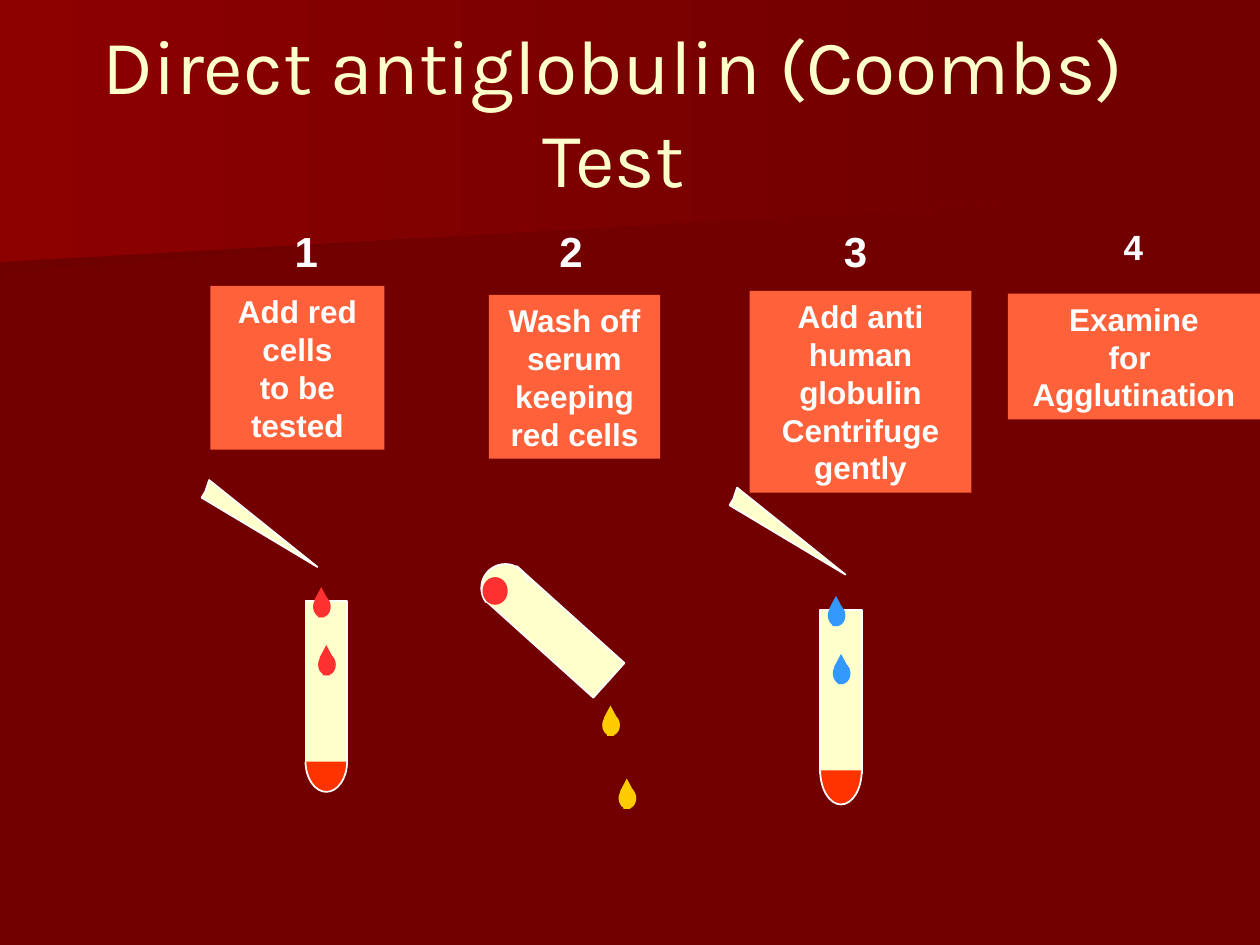
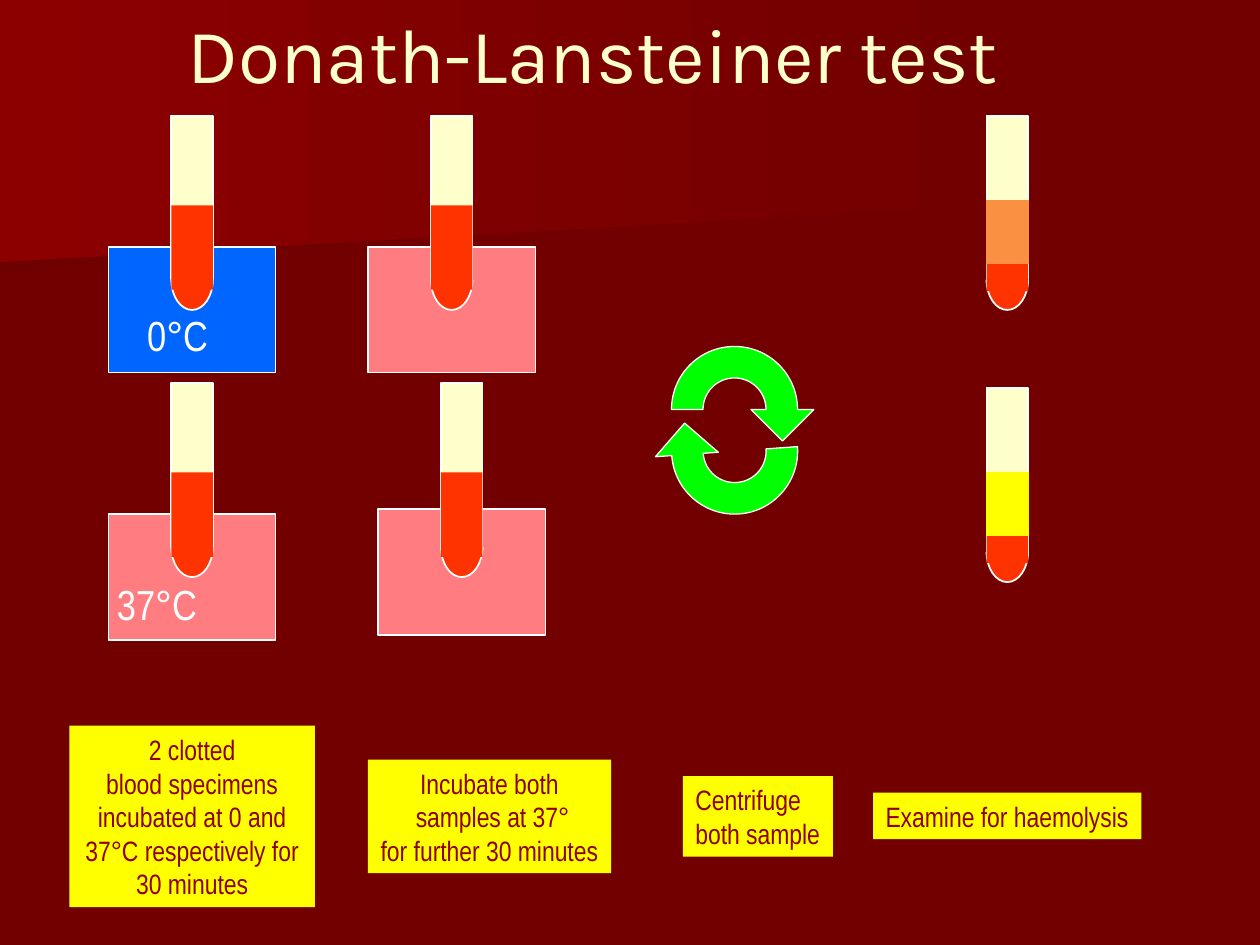
from math import ceil, cos, radians, sin, tan

from lxml import etree
from pptx import Presentation
from pptx.dml.color import RGBColor
from pptx.enum.shapes import MSO_SHAPE
from pptx.enum.text import MSO_ANCHOR, PP_ALIGN
from pptx.oxml.ns import qn
from pptx.util import Inches, Pt

RECTANGLE, OVAL, UP_ARROW = MSO_SHAPE.RECTANGLE, MSO_SHAPE.OVAL, MSO_SHAPE.UP_ARROW
LEFT, CENTER, MIDDLE = PP_ALIGN.LEFT, PP_ALIGN.CENTER, MSO_ANCHOR.MIDDLE

WIDTH, HEIGHT = 10, 7.5
COLORS = {
    "background": "720000", "band_shadow": "6F0000", "band": "8C0000",
    "cream": "FFFFCC", "white": "FFFFFF", "label": "FF623A", "cells": "FF3030",
    "blood": "FF3300", "serum": "FFCC00", "reagent": "3399FF", "cold": "0066FF",
    "warm": "FF7C80", "note": "FFFF00", "note_text": "8C0000",
    "haemolysed": "FA9142", "arrow": "00FF00",
}
BANDS = [
    ("band_shadow", [(7.78, 1.53), (0, 2.17), (0, 1.01), (7.79, 1.01), (7.78, 1.28)]),
    ("band", [(7.92, 1.62), (0, 2.08), (0, 0), (7.92, 0)]),
]

# Boxes are left, top, width, height in inches
COOMBS_TITLE = ("Direct antiglobulin (Coombs) Test", (0.58, 0.25, 8.58, 1.25))
COOMBS_STEPS = [
    # number, number box, number size, label lines, label box
    ("2", (4.34, 1.74, 0.39, 0.5), 24, ["Wash off", "serum", "keeping red cells"],
     (3.88, 2.34, 1.36, 1.3)),
    ("4", (8.82, 1.74, 0.36, 0.43), 20, ["Examine", "for ", "Agglutination"],
     (8, 2.33, 2, 1)),
    ("1", (2.24, 1.74, 0.39, 0.5), 24, ["Add red cells", "to be tested"],
     (1.67, 2.27, 1.38, 1.3)),
    ("3", (6.6, 1.74, 0.34, 0.5), 24,
     ["Add anti human", "globulin", "Centrifuge gently"], (5.95, 2.31, 1.76, 1.6)),
]
FILLINGS = [
    # pipette corner, tube corner, cap height, drop colour
    ((1.6, 3.81), (2.425, 4.77), 0.24, "cells"),
    ((5.79, 3.87), (6.51, 4.84), 0.27, "reagent"),
]
PIPETTE = [(0, 0.14), (0.92, 0.69), (0.06, 0), (0.03, 0.09)]
DROPS_IN_TUBE = [(0.06, -0.11), (0.1, 0.35)]
POURED_DROPS = [(4.78, 5.6), (4.91, 6.18)]

DONATH_TITLE = ("Donath-Lansteiner test", (0.42, 0, 8.58, 0.83))
TUBE_WIDTH, TUBE_HEIGHT = 0.33, 1.3
BATHS = [
    # left, top, colour, top of the tube
    (0.86, 1.96, "cold", 0.92), (0.86, 4.08, "warm", 3.04),
    (2.92, 1.96, "warm", 0.92), (3, 4.04, "warm", 3.04),
]
TEMPERATURES = [("0°C", (1.07, 2.41, 0.69, 0.5)), ("37°C", (0.83, 4.54, 0.84, 0.5))]
RESULTS = [(3.08, "note"), (0.92, "haemolysed")]
RESULT_LEFT = 7.83
SPINS = [((5.33, 2.75, 1, 1), 0), ((5.33, 3.08, 1, 1), 175.9)]
NOTES = [
    (["2 clotted", "blood specimens",
      "incubated at 0 and 37°C respectively for 30 minutes"],
     (0.55, 5.76, 1.95, 1.44), CENTER, True),
    (["Incubate both", " samples at 37°", "for further 30 minutes"],
     (2.92, 6.03, 1.93, 0.9), CENTER, False),
    (["Centrifuge", "both sample"], (5.42, 6.16, 1.19, 0.64), LEFT, False),
    (["Examine for haemolysis"], (6.93, 6.29, 2.13, 0.37), LEFT, False),
]


def rgb(name):
    return RGBColor.from_string(COLORS[name])


def paint(shape, fill=None, line=None, line_width=1.0):
    shape.shadow.inherit = False
    if fill:
        shape.fill.solid()
        shape.fill.fore_color.rgb = rgb(fill)
    else:
        shape.fill.background()
    if line:
        shape.line.color.rgb = rgb(line)
        shape.line.width = Pt(line_width)
    else:
        shape.line.fill.background()
    return shape


def add_preset(slide, kind, box, rotation=0, **style):
    shape = slide.shapes.add_shape(kind, *map(Inches, box))
    shape.rotation = rotation
    return paint(shape, **style)


def add_outline(slide, points, **style):
    corners = [(Inches(x), Inches(y)) for x, y in points]
    builder = slide.shapes.build_freeform(*corners[0])
    builder.add_line_segments(corners[1:], close=True)
    return paint(builder.convert_to_shape(), **style)


def add_curved(slide, box, paths, rotation=0, **style):
    """Freeform from (attributes, commands) paths, in inches from the box corner."""
    left, top, width, height = box
    corners = [(0, 0), (width, 0), (width, height), (0, height)]
    shape = add_outline(slide, shift(corners, left, top), **style)
    shape.rotation = rotation
    path_list = next(shape.element.iter(qn("a:pathLst")))
    path_list.clear()
    for attributes, commands in paths:
        path = etree.SubElement(path_list, qn("a:path"), w=str(Inches(width)),
                                h=str(Inches(height)), **attributes)
        for tag, points in commands:
            command = etree.SubElement(path, qn("a:" + tag))
            for x, y in points:
                etree.SubElement(command, qn("a:pt"), x=str(Inches(x)), y=str(Inches(y)))
    return shape


def add_text(slide, lines, box, size, font="Arial", color="white", bold=False,
             align=LEFT, wrap=False, fill=None):
    """Put one paragraph per line in a text box, or in a filled rectangle."""
    if fill:
        shape = add_preset(slide, RECTANGLE, box, fill=fill)
    else:
        shape = slide.shapes.add_textbox(*map(Inches, box))
    frame = shape.text_frame
    frame.word_wrap = wrap
    frame.vertical_anchor = MIDDLE
    for index, line in enumerate(lines):
        paragraph = frame.add_paragraph() if index else frame.paragraphs[0]
        paragraph.alignment = align
        run = paragraph.add_run()
        run.text = line
        run.font.size = Pt(size)
        run.font.name = font
        run.font.bold = bold
        run.font.color.rgb = rgb(color)


def arc(center, radius_x, radius_y, start, end, first="moveTo"):
    """Commands for an elliptical arc, in degrees clockwise from the right."""
    count = ceil(abs(end - start) / 90)
    step = radians((end - start) / count)
    pull = 4 / 3 * tan(step / 4)

    def place(angle, tangent=0):
        return (center[0] + radius_x * (cos(angle) - tangent * sin(angle)),
                center[1] + radius_y * (sin(angle) + tangent * cos(angle)))

    angles = [radians(start) + step * index for index in range(count + 1)]
    curves = [("cubicBezTo", [place(a, pull), place(b, -pull), place(b)])
              for a, b in zip(angles, angles[1:])]
    return [(first, [place(angles[0])])] + curves


def shift(points, left, top):
    return [(left + x, top + y) for x, y in points]


def add_cap(slide, box, center, radii, angles, fill, rotation=0):
    """Rounded tube end: filled to its centre, outlined only along the curve."""
    curve = arc(center, *radii, *angles)
    wedge = curve + [("lnTo", [center]), ("close", [])]
    add_curved(slide, box, [({"fill": "none"}, curve), ({"stroke": "0"}, wedge)],
               rotation=rotation, fill=fill, line="white")


def add_tube(slide, left, top, cap_top=TUBE_HEIGHT, cap_height=0.24, layers=()):
    add_preset(slide, RECTANGLE, (left, top, TUBE_WIDTH, TUBE_HEIGHT),
               fill="cream", line="white")
    radius = TUBE_WIDTH / 2
    add_cap(slide, (left, top + cap_top, TUBE_WIDTH, cap_height), (radius, 0),
            (radius, cap_height), (0, 180), "blood")
    for offset, height, color, line in layers:
        add_preset(slide, RECTANGLE, (left, top + offset, TUBE_WIDTH, height),
                   fill=color, line=line, line_width=0.75)


def add_drop(slide, left, top, color):
    add_preset(slide, OVAL, (left, top + 0.07, 0.14, 0.17), fill=color)
    tip = add_preset(slide, UP_ARROW, (left + 0.01, top, 0.11, 0.24), fill=color)
    tip.adjustments[0], tip.adjustments[1] = 0.5, 0.932


def add_pouring_tube(slide):
    add_preset(slide, RECTANGLE, (4.22, 4.44, 0.37, 1.15), rotation=132,
               fill="cream", line="white")
    add_cap(slide, (3.79, 4.49, 0.38, 0.3), (0.19, 0.11), (0.19, 0.19), (11, 215),
            "cream", rotation=132)
    add_preset(slide, RECTANGLE, (3.82, 4.63, 0.36, 0.06), rotation=132, fill="cream")


def add_spin_arrow(slide, box, turn):
    """Half-ring arrow whose box is the full circle, so it turns about its centre."""
    center = (0.5, 0.5)
    head = [(1.13, 0.5), (0.88, 0.75), (0.63, 0.5)]
    commands = (arc(center, 0.25, 0.25, 0, -180)
                + arc(center, 0.5, 0.5, -180, 0, first="lnTo")
                + [("lnTo", [point]) for point in head] + [("close", [])])
    add_curved(slide, box, [({}, commands)], rotation=turn, fill="arrow",
               line="white", line_width=0.75)


def move_bands_to_master(slide, master):
    """Draw the shared background bands and hand them to the slide master."""
    master.background.fill.solid()
    master.background.fill.fore_color.rgb = rgb("background")
    for index, (color, points) in enumerate(BANDS):
        band = add_outline(slide, points)
        band.fill.gradient()
        band.fill.gradient_angle = 0
        stops = band.fill.gradient_stops
        for stop, position, name in zip(stops, (0, 1), (color, "background")):
            stop.position = position
            stop.color.rgb = rgb(name)
        master.shapes.element.insert(2 + index, band.element)


def add_titled_slide(presentation, title, title_box):
    slide = presentation.slides.add_slide(presentation.slide_layouts[6])
    add_text(slide, [title], title_box, 44, font="Karla", color="cream",
             align=CENTER, wrap=True)
    return slide


def build_coombs(presentation):
    slide = add_titled_slide(presentation, *COOMBS_TITLE)
    move_bands_to_master(slide, presentation.slide_master)
    add_pouring_tube(slide)
    for number, number_box, size, lines, label_box in COOMBS_STEPS:
        add_text(slide, lines, label_box, 18, bold=True, align=CENTER, wrap=True,
                 fill="label")
        add_text(slide, [number], number_box, size, bold=True)
    add_preset(slide, OVAL, (3.83, 4.58, 0.2, 0.22), fill="cells")
    for left, top in POURED_DROPS:
        add_drop(slide, left, top, "serum")
    for pipette, tube, cap_height, color in FILLINGS:
        add_outline(slide, shift(PIPETTE, *pipette), fill="cream", line="white")
        add_tube(slide, *tube, cap_top=1.275, cap_height=cap_height)
        for left, top in shift(DROPS_IN_TUBE, *tube):
            add_drop(slide, left, top, color)


def build_donath(presentation):
    slide = add_titled_slide(presentation, *DONATH_TITLE)
    for left, top, color, tube_top in BATHS:
        add_preset(slide, RECTANGLE, (left, top, 1.33, 1), fill=color, line="white",
                   line_width=0.75)
        add_tube(slide, left + 0.5, tube_top, layers=[(0.71, 0.67, "blood", None)])
    for text, box in TEMPERATURES:
        add_text(slide, [text], box, 24, font="Arial Narrow")
    for box, turn in SPINS:
        add_spin_arrow(slide, box, turn)
    for top, serum in RESULTS:
        add_tube(slide, RESULT_LEFT, top, layers=[(1.17, 0.22, "blood", None),
                                                  (0.67, 0.5, serum, serum)])
    for lines, box, align, wrap in NOTES:
        add_text(slide, lines, box, 16, font="Arial Narrow", color="note_text",
                 align=align, wrap=wrap, fill="note")


def main():
    presentation = Presentation()
    presentation.slide_width, presentation.slide_height = Inches(WIDTH), Inches(HEIGHT)
    build_coombs(presentation)
    build_donath(presentation)
    presentation.save("out.pptx")


if __name__ == "__main__":
    main()
